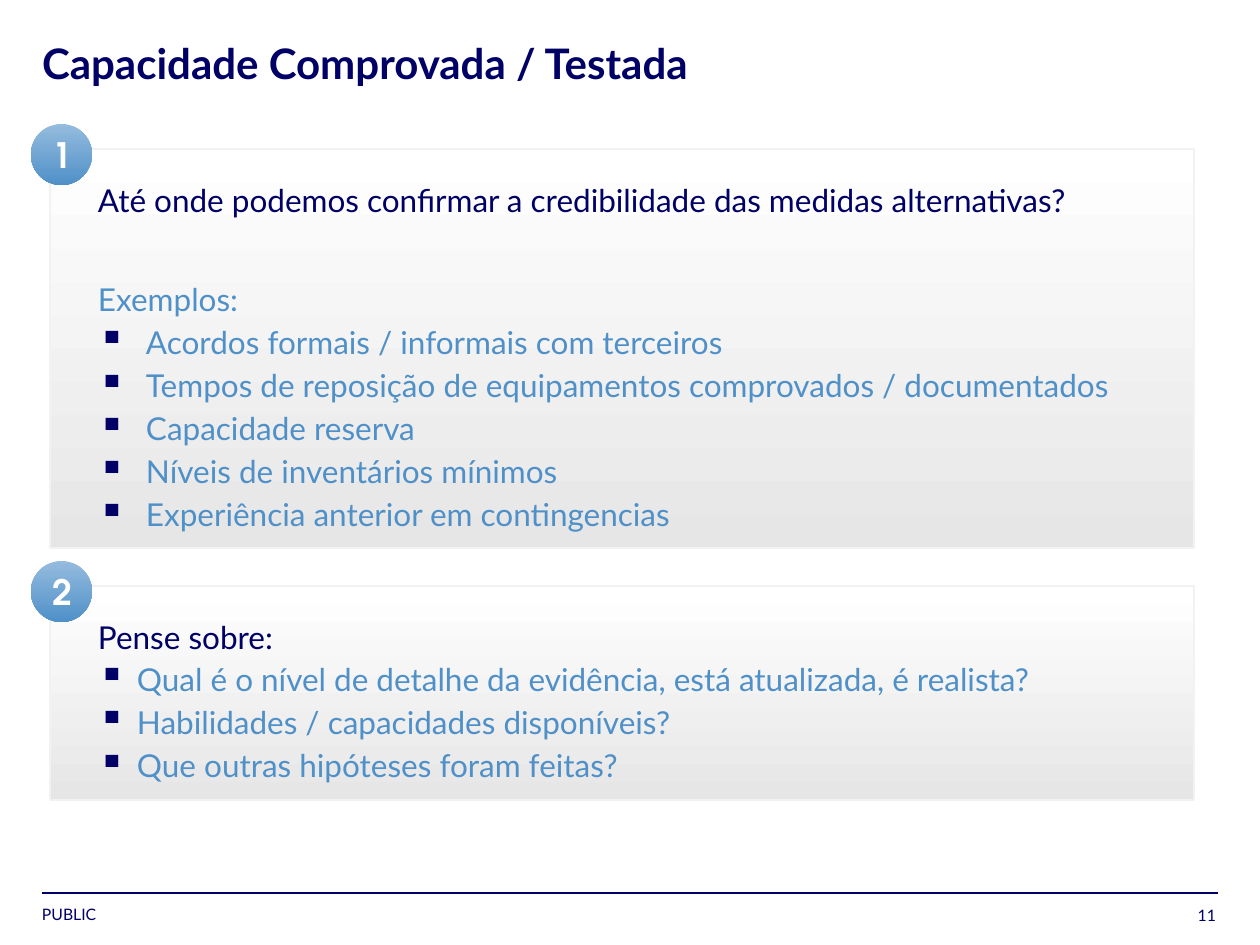
from lxml import etree
from pptx import Presentation
from pptx import util as u
from pptx.dml.color import RGBColor
from pptx.enum import shapes, text
from pptx.oxml import ns

SCALE = 914400 / 126
NAVY = RGBColor(0x00, 0x00, 0x66)
BLUE = RGBColor(0x4F, 0x90, 0xC8)
LIGHT_BLUE = RGBColor(0x95, 0xBC, 0xDE)
WHITE = RGBColor(0xFF, 0xFF, 0xFF)
GREY = RGBColor(0xE6, 0xE6, 0xE6)
EDGE = RGBColor(0xF2, 0xF2, 0xF2)
BODY_FONT = "Lato"
BADGE_FONT = "TeX Gyre Adventor"


def px(*values):
    return [u.Emu(round(value * SCALE)) for value in values]


def add_span(para, words, size, color, font=BODY_FONT, bold=False):
    span = para.add_run()
    span.text = words
    span.font.name = font
    span.font.size = u.Pt(size)
    span.font.color.rgb = color
    span.font.bold = bold


def add_box(page, place, wrap=True):
    frame = page.shapes.add_textbox(*px(*place)).text_frame
    frame.margin_left = frame.margin_top = 0
    frame.margin_right = frame.margin_bottom = 0
    frame.word_wrap = wrap
    return frame


def add_label(page, place, words, size, bold=False, wrap=True):
    frame = add_box(page, place, wrap)
    para = frame.paragraphs[0]
    add_span(para, words, size, NAVY, bold=bold)
    return frame, para


def add_bullet(para, indent):
    props = para._p.get_or_add_pPr()
    margin = px(indent)[0]
    props.set("marL", str(margin))
    props.set("indent", str(-margin))
    color = etree.SubElement(props, ns.qn("a:buClr"))
    etree.SubElement(color, ns.qn("a:srgbClr"), val=str(NAVY))
    etree.SubElement(props, ns.qn("a:buSzPct"), val="120000")
    etree.SubElement(props, ns.qn("a:buChar"), char="▪")


def add_list(page, place, items, indent, heading=None):
    frame = add_box(page, place)
    lines = [heading] + items if heading else items
    for number, words in enumerate(lines):
        para = frame.add_paragraph() if number else frame.paragraphs[0]
        if words != heading:
            add_bullet(para, indent)
        para.space_after = u.Pt(3)
        add_span(para, words, 18, BLUE)


def add_gradient_shape(page, kind, place, top_color, bottom_color):
    shape = page.shapes.add_shape(kind, *px(*place))
    shape.shadow.inherit = False
    shape.fill.gradient()
    shape.fill.gradient_angle = 270
    for stop, color, position in zip(shape.fill.gradient_stops, (top_color, bottom_color), (0, 1)):
        stop.color.rgb = color
        stop.position = position
    shape.line.fill.background()
    return shape


def add_panel(page, number, top, height, question):
    panel = add_gradient_shape(page, shapes.MSO_SHAPE.RECTANGLE, (50, top, 1144, height), WHITE, GREY)
    panel.line.color.rgb = EDGE
    panel.line.width = u.Pt(0.75)
    para = add_label(page, (98, top + 32, 1048, 48), question, 18)[1]
    para.space_after = u.Pt(3)
    badge = add_gradient_shape(page, shapes.MSO_SHAPE.OVAL, (31, top - 25, 61, 61), LIGHT_BLUE, BLUE)
    badge.text_frame.vertical_anchor = text.MSO_ANCHOR.MIDDLE
    para = badge.text_frame.paragraphs[0]
    para.alignment = text.PP_ALIGN.CENTER
    add_span(para, str(number), 20, WHITE, BADGE_FONT, True)


def add_footer(page):
    rule = page.shapes.add_connector(shapes.MSO_CONNECTOR.STRAIGHT, *px(42, 893, 1218, 893))
    rule.line.color.rgb = NAVY
    rule.line.width = u.Pt(1)
    etree.SubElement(rule._element.spPr, ns.qn("a:effectLst"))
    add_label(page, (42, 905, 161, 19), "PUBLIC", 9, wrap=False)
    frame, para = add_label(page, (1150, 905, 66, 20), "11", 9)
    frame.vertical_anchor = text.MSO_ANCHOR.BOTTOM
    para.alignment = text.PP_ALIGN.RIGHT


def main():
    deck = Presentation()
    deck.slide_width, deck.slide_height = px(1260, 945)
    page = deck.slides.add_slide(deck.slide_layouts[6])
    add_footer(page)
    title = add_label(page, (42, 43, 1055, 49), "Capacidade Comprovada / Testada", 24, bold=True)[1]
    title.line_spacing = 0.9
    add_panel(page, 1, 149, 399, "Até onde podemos confirmar a credibilidade das medidas alternativas?")
    add_list(page, (98, 280, 1096, 270), [
        "Acordos formais / informais com terceiros",
        "Tempos de reposição de equipamentos comprovados / documentados",
        "Capacidade reserva",
        "Níveis de inventários mínimos",
        "Experiência anterior em contingencias",
    ], 48, heading="Exemplos:")
    add_panel(page, 2, 586, 214, "Pense sobre:")
    add_list(page, (98, 660, 1048, 171), [
        "Qual é o nível de detalhe da evidência, está atualizada, é realista?",
        "Habilidades / capacidades disponíveis?",
        "Que outras hipóteses foram feitas?",
    ], 39)
    deck.save("out.pptx")


if __name__ == "__main__":
    main()
